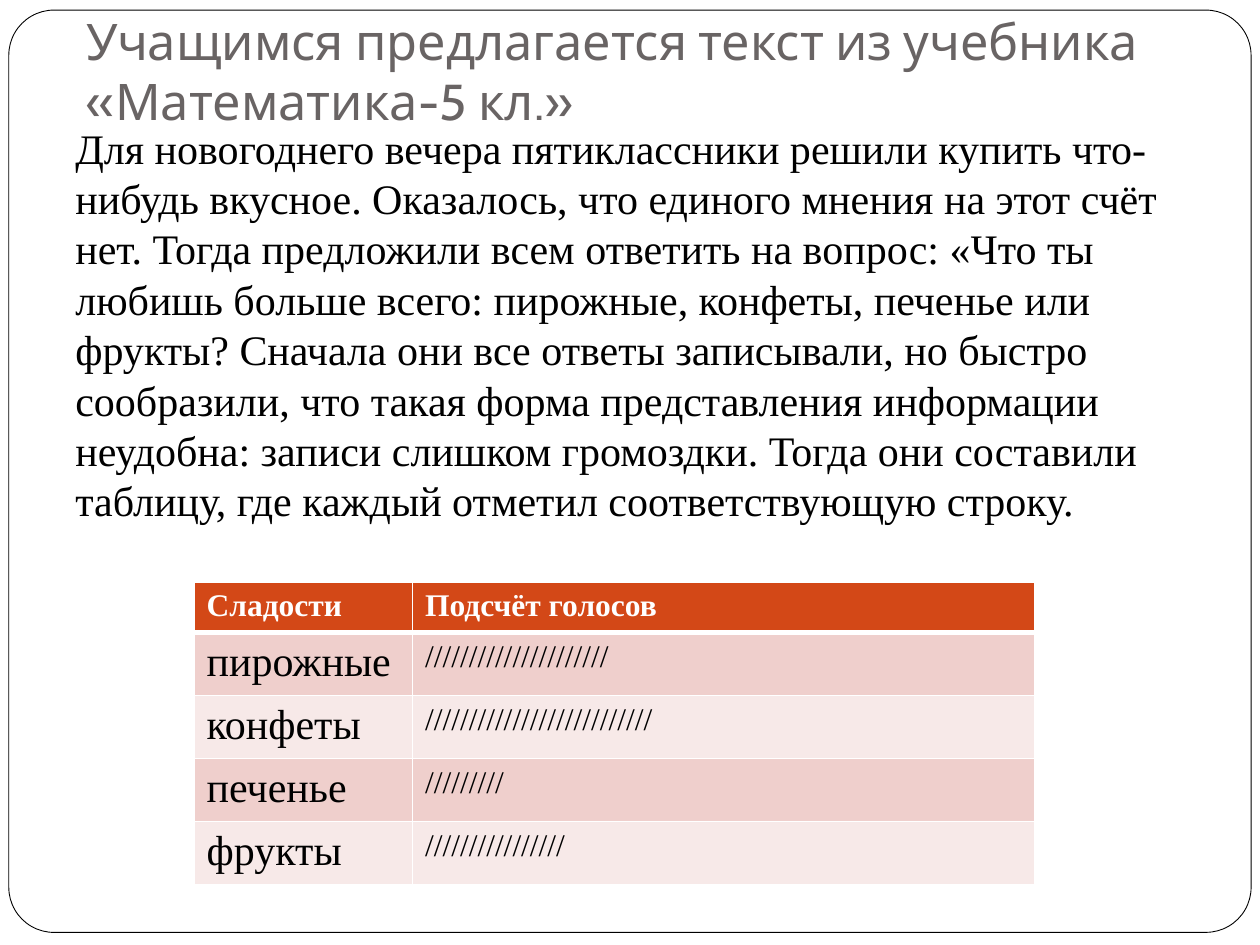
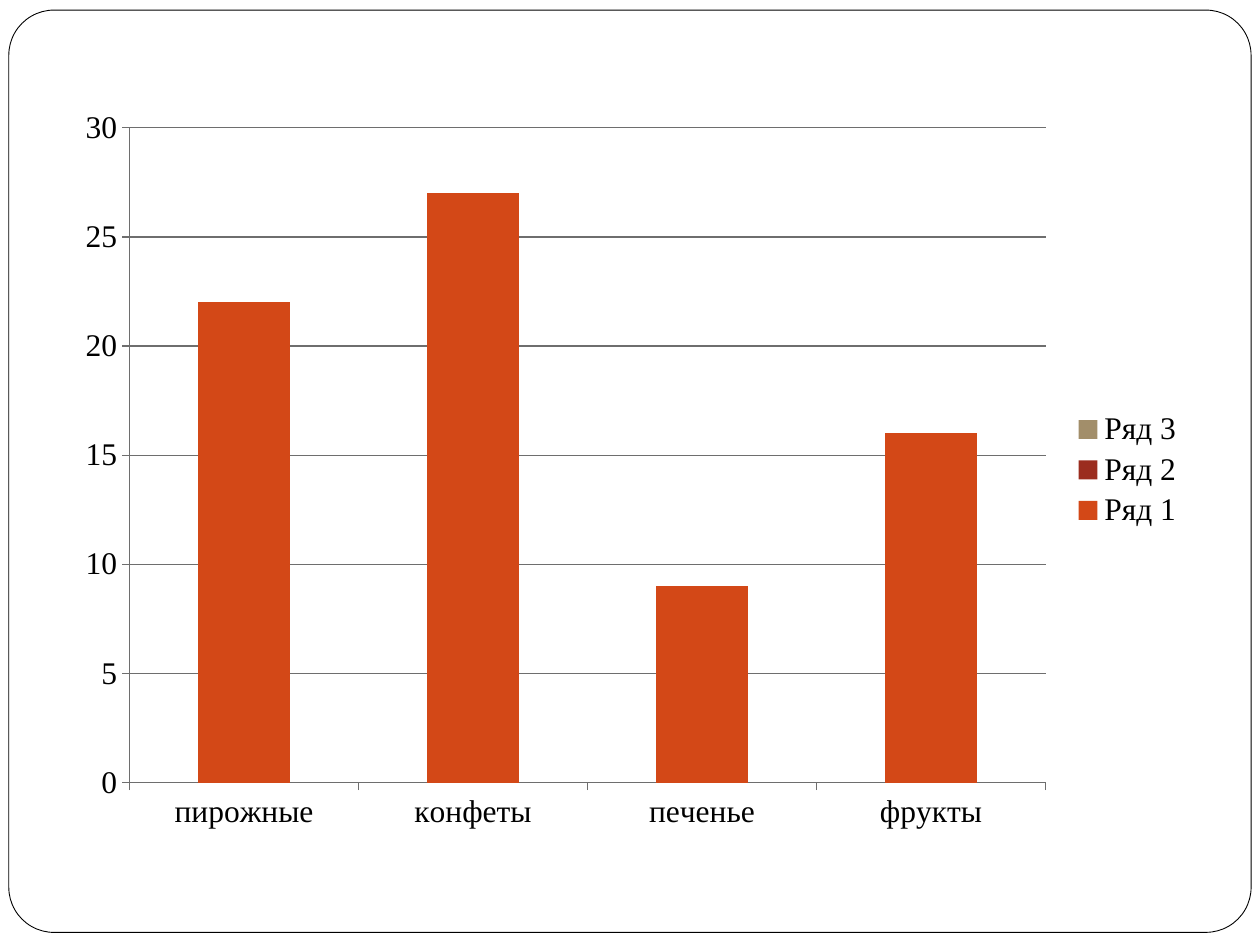
from lxml.etree import SubElement as Sub
from pptx import Presentation as Deck
from pptx.chart.data import CategoryChartData as Data
from pptx.dml.color import RGBColor as Rgb
from pptx.enum.chart import XL_CHART_TYPE as Kind, XL_LEGEND_POSITION as Side, XL_TICK_MARK as Tick
from pptx.enum.shapes import MSO_SHAPE as Shape
from pptx.enum.text import MSO_ANCHOR as Anchor
from pptx.oxml.ns import qn
from pptx.util import Inches, Pt

COLS, ROWS = 100, 75
UNIT = Inches(10) / COLS
HUES = {
    "paper": "FFFFFF", "ink": "000000", "title": "696464", "axis": "6E6E6E",
    "rust": "D34817", "wine": "9B2D1F", "sand": "A28E6A",
    "rose": "EFCFCC", "blush": "F7E9E8",
}
SERIF = "Times New Roman"
LOOKS = {
    "title": {"size": Pt(28.8), "name": "Cabin", "bold": False},
    "body": {"size": Pt(24), "name": SERIF, "bold": False},
    "small": {"size": Pt(18), "name": SERIF, "bold": False},
    "head": {"size": Pt(18), "name": SERIF, "bold": True},
}
TITLE = "Учащимся предлагается текст из учебника «Математика-5 кл.»"
STORY = (
    "Для новогоднего вечера пятиклассники решили купить что-нибудь вкусное. "
    "Оказалось, что единого мнения на этот счёт нет. Тогда предложили всем "
    "ответить на вопрос: «Что ты любишь больше всего: пирожные, конфеты, "
    "печенье или фрукты? Сначала они все ответы записывали, но быстро "
    "сообразили, что такая форма представления информации неудобна: записи "
    "слишком громоздки. Тогда они составили таблицу, где каждый отметил "
    "соответствующую строку."
)
HEADS = ["Сладости", "Подсчёт голосов"]
SWEETS = ["пирожные", "конфеты", "печенье", "фрукты"]
MARKS = [21, 26, 9, 16]
VOTES = [22, 27, 9, 16]


def span(n):
    return round(n * UNIT)


def place(box):
    return [span(n) for n in box]


def hue(key):
    return Rgb.from_string(HUES[key])


def fill(part, key):
    part.fill.solid()
    part.fill.fore_color.rgb = hue(key)


def style(font, look, key):
    for name, value in LOOKS[look].items():
        setattr(font, name, value)
    font.color.rgb = hue(key)


def write(para, text, look, key):
    run = para.add_run()
    run.text = text
    style(run.font, look, key)


def frame(slide, box):
    card = slide.shapes.add_shape(Shape.ROUNDED_RECTANGLE, *place(box))
    card.adjustments[0] = 0.049
    card.shadow.inherit = False
    fill(card, "paper")
    card.line.color.rgb = hue("ink")
    card.line.width = Pt(0.5)


def prose(slide, box, text, look, key, form, gap=0):
    area = slide.shapes.add_textbox(*place(box)).text_frame
    for name, value in form.items():
        setattr(area, name, value)
    para = area.paragraphs[0]
    para.space_before = Pt(gap)
    write(para, text, look, key)


def edge(cell, sides):
    props = cell._tc.get_or_add_tcPr()
    for at, (side, width) in enumerate(sides.items()):
        line = Sub(props, qn(f"a:{side}"), w=str(Pt(width)))
        paint = Sub(line, qn("a:solidFill"))
        Sub(paint, qn("a:srgbClr"), val=HUES["paper"])
        props.insert(at, line)


def tally(slide, box, split, tops):
    left, top, width, height = box
    rows = [HEADS] + [[sweet, "/" * count] for sweet, count in zip(SWEETS, MARKS)]
    grid = slide.shapes.add_table(len(rows), len(HEADS), *place(box)).table
    for col, share in zip(grid.columns, (split, 1 - split)):
        col.width = span(width * share)
    for r, texts in enumerate(rows):
        grid.rows[r].height = span(tops if r == 0 else (height - tops) / len(SWEETS))
        for c, text in enumerate(texts):
            cell = grid.cell(r, c)
            fill(cell, "rust" if r == 0 else ("blush", "rose")[r % 2])
            look = "head" if r == 0 else ("body", "small")[c]
            write(cell.text_frame.paragraphs[0], text, look, "ink" if r else "paper")
            edge(cell, {"lnL": 1, "lnR": 1, "lnT": 3 if r == 1 else 1, "lnB": 1 if r else 3})


def graph(slide, box):
    data = Data()
    data.categories = SWEETS
    blank = [None] * len(SWEETS)
    for n, vals in enumerate([VOTES, blank, blank], 1):
        data.add_series(f"Ряд {n}", vals)
    chart = slide.shapes.add_chart(Kind.COLUMN_STACKED, *place(box), data).chart
    style(chart.font, "small", "ink")
    chart.has_title = False
    chart.has_legend = True
    chart.legend.position = Side.RIGHT
    chart.legend.include_in_layout = False
    plot = chart.plots[0]
    for name, value in {"gap_width": 150, "overlap": 100, "vary_by_categories": False}.items():
        setattr(plot, name, value)
    for row, key in zip(plot.series, ("rust", "wine", "sand")):
        fill(row.format, key)
    values = chart.value_axis
    values.has_major_gridlines = True
    for axis in (chart.category_axis, values):
        axis.major_tick_mark = Tick.OUTSIDE
        axis.minor_tick_mark = Tick.NONE
    for part in (chart.category_axis, values, values.major_gridlines):
        part.format.line.color.rgb = hue("axis")
        part.format.line.width = Pt(0.75)


def sheet(deck):
    slide = deck.slides.add_slide(deck.slide_layouts[6])
    frame(slide, (0.7, 0.8, COLS - 1.4, ROWS - 1.8))
    return slide


def main():
    deck = Deck()
    deck.slide_width, deck.slide_height = span(COLS), span(ROWS)

    task = sheet(deck)
    low = {"word_wrap": True, "vertical_anchor": Anchor.BOTTOM, "margin_bottom": span(1)}
    prose(task, (5.9, 2.1, 90, 9.3), TITLE, "title", "title", low)
    prose(task, (5, 9.2, 90, 63), STORY, "body", "ink", {"word_wrap": True}, 5.8)
    tally(task, (15.4, 46.2, 66.7, 22.7), 0.26, 4)

    graph(sheet(deck), (5, 7.6, 90, 59.4))
    deck.save("out.pptx")


if __name__ == "__main__":
    main()
